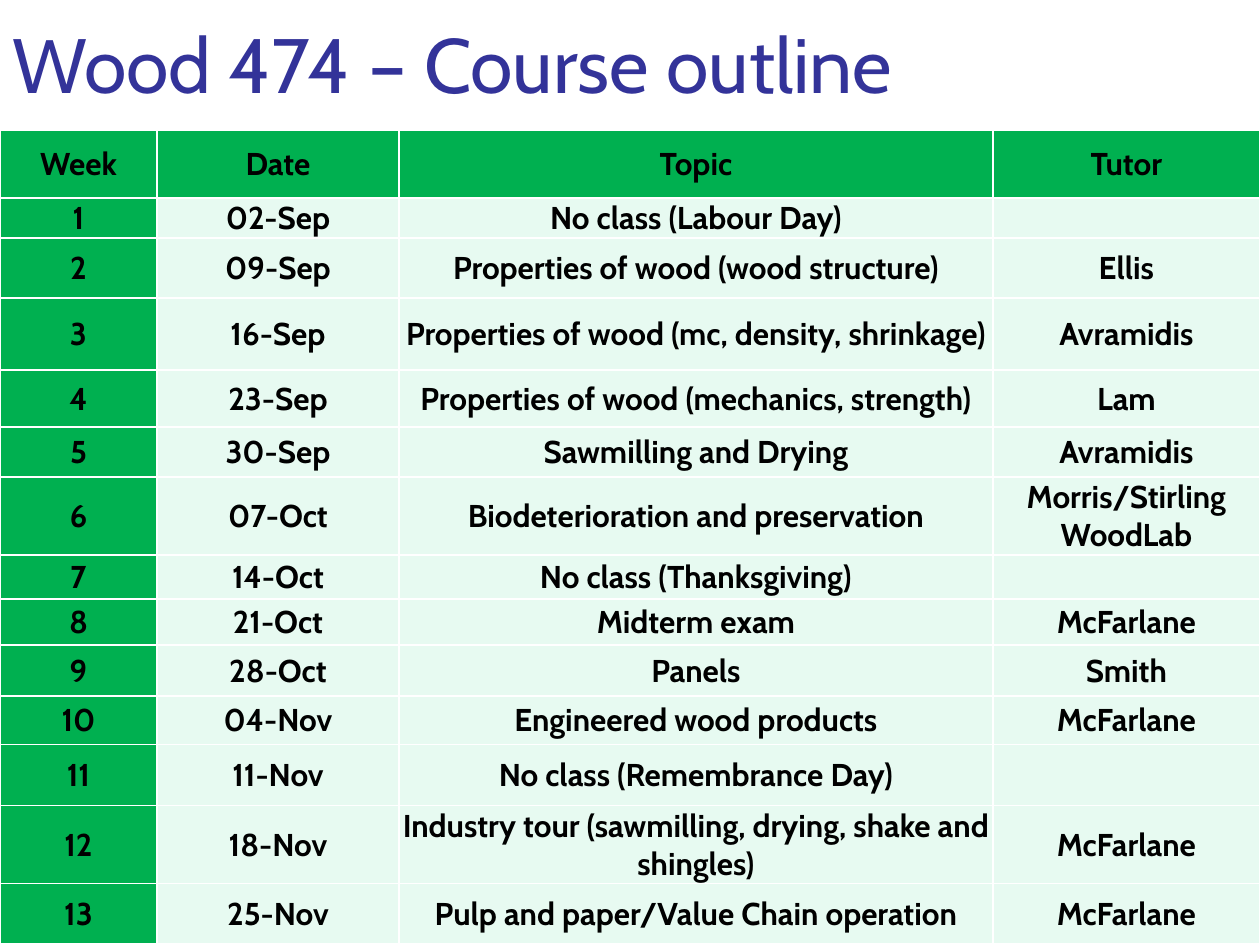
from lxml import etree
from pptx import Presentation, util as u
from pptx.dml.color import RGBColor
from pptx.enum import text
from pptx.oxml.ns import qn

PX = 914400 // 126
FONT = "Cabin"
GREEN, MINT, WHITE = "00B050", "E7FAF1", "FFFFFF"

TITLE = "Wood 474 – Course outline"
TITLE_BOX = (0, 10, 1222, 105)
TABLE_TOP = 130
COLUMNS = [("Week", 157), ("Date", 242), ("Topic", 594), ("Tutor", 267)]
HEADER_HEIGHT = 68
WEEKS = [  # date, topic, tutor, row height
    ("02-Sep", "No class (Labour Day)", "", 40),
    ("09-Sep", "Properties of wood (wood structure)", "Ellis", 60),
    ("16-Sep", "Properties of wood (mc, density, shrinkage)", "Avramidis", 72),
    ("23-Sep", "Properties of wood (mechanics, strength)", "Lam", 57),
    ("30-Sep", "Sawmilling and Drying", "Avramidis", 50),
    ("07-Oct", "Biodeterioration and preservation", "Morris/Stirling\nWoodLab", 78),
    ("14-Oct", "No class (Thanksgiving)", "", 44),
    ("21-Oct", "Midterm exam", "McFarlane", 46),
    ("28-Oct", "Panels", "Smith", 51),
    ("04-Nov", "Engineered wood products", "McFarlane", 49),
    ("11-Nov", "No class (Remembrance Day)", "", 61),
    ("18-Nov", "Industry tour (sawmilling, drying, shake and shingles)", "McFarlane", 78),
    ("25-Nov", "Pulp and paper/Value Chain operation", "McFarlane", 60),
]
CELL_FORMAT = {
    "margin_left": PX, "margin_right": PX, "margin_top": PX, "margin_bottom": 0,
    "vertical_anchor": text.MSO_ANCHOR.MIDDLE,
}


def rgb(value):
    return RGBColor.from_string(value)


def px(*values):
    return [v * PX for v in values]


def style(run, size, color, bold=False):
    for name, value in {"name": FONT, "size": u.Pt(size), "bold": bold}.items():
        setattr(run.font, name, value)
    run.font.color.rgb = rgb(color)


def add_borders(cell, color, width):
    tc_pr = cell._tc.get_or_add_tcPr()
    for side in ("a:lnL", "a:lnR", "a:lnT", "a:lnB"):
        line = etree.SubElement(tc_pr, qn(side), w=str(u.Pt(width)))
        fill = etree.SubElement(line, qn("a:solidFill"))
        etree.SubElement(fill, qn("a:srgbClr"), val=color)


def fill_cell(cell, content, color):
    for name, value in CELL_FORMAT.items():
        setattr(cell, name, value)
    add_borders(cell, WHITE, 1)
    cell.fill.solid()
    cell.fill.fore_color.rgb = rgb(color)
    cell.text = content
    for p in cell.text_frame.paragraphs:
        p.alignment = text.PP_ALIGN.CENTER
        for r in p.runs:
            style(r, 18, "000000", bold=True)


def add_title(s):
    tf = s.shapes.add_textbox(*px(*TITLE_BOX)).text_frame
    tf.word_wrap = True
    tf.vertical_anchor = text.MSO_ANCHOR.BOTTOM
    r = tf.paragraphs[0].add_run()
    r.text = TITLE
    style(r, 44, "333399")


def add_schedule(s):
    names, widths = zip(*COLUMNS)
    rows = [names] + [(str(n), *week[:3]) for n, week in enumerate(WEEKS, 1)]
    heights = [HEADER_HEIGHT] + [week[3] for week in WEEKS]
    table = s.shapes.add_table(
        len(rows), len(names), *px(0, TABLE_TOP, sum(widths), sum(heights))).table
    for column, width in zip(table.columns, widths):
        column.width = width * PX
    for row, height in zip(table.rows, heights):
        row.height = height * PX
    for i, row in enumerate(rows):
        for j, content in enumerate(row):
            fill_cell(table.cell(i, j), content, GREEN if i == 0 or j == 0 else MINT)


def main():
    prs = Presentation()
    prs.slide_width, prs.slide_height = u.Inches(10), u.Inches(7.5)
    s = prs.slides.add_slide(prs.slide_layouts[6])
    add_title(s)
    add_schedule(s)
    prs.save("out.pptx")


if __name__ == "__main__":
    main()
